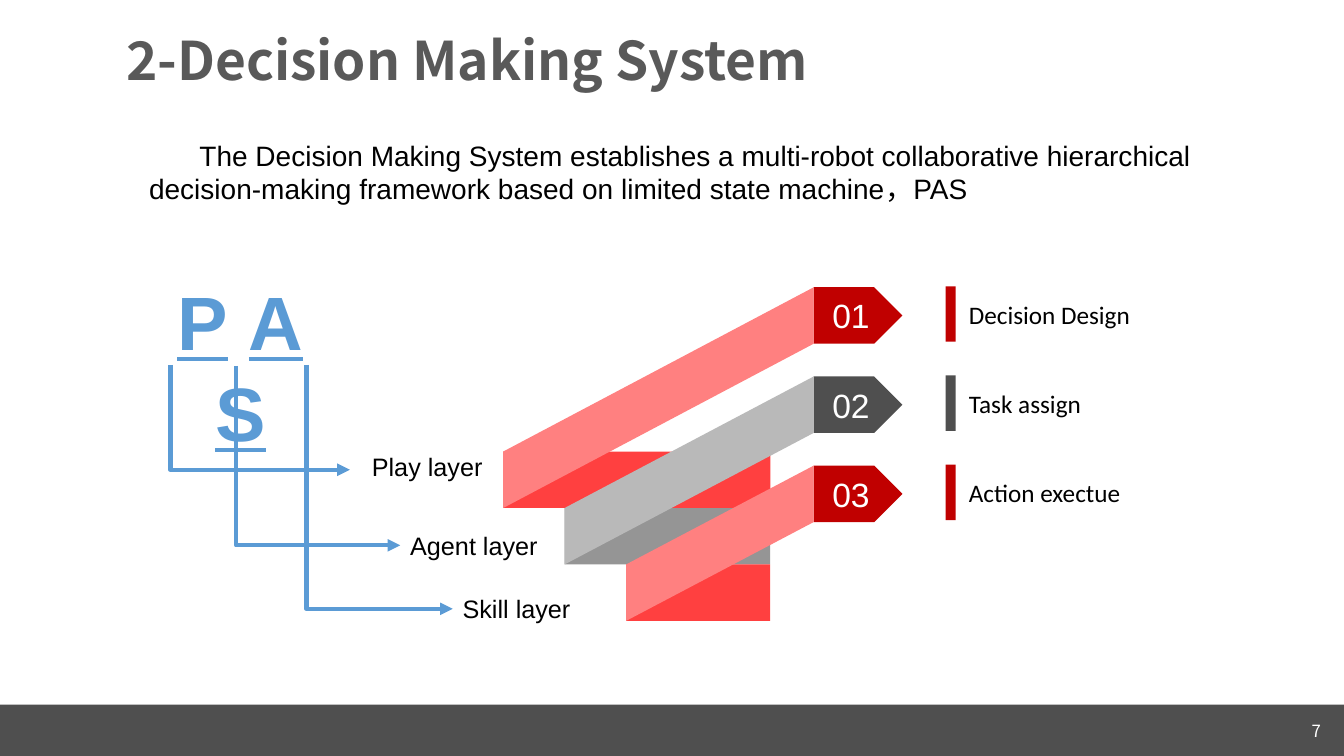
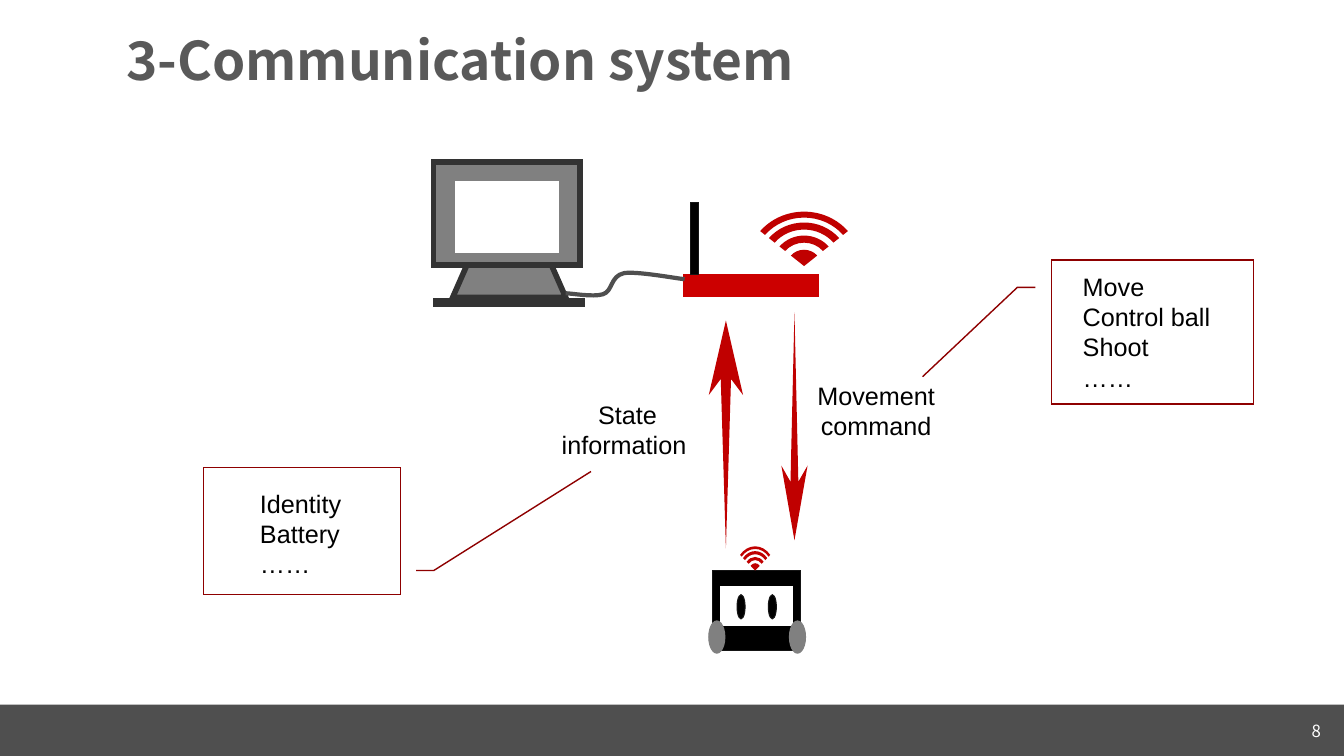
from math import cos, radians, sin, tan

from lxml import etree
from pptx import Presentation
from pptx.dml.color import RGBColor
from pptx.enum.shapes import MSO_CONNECTOR as CONN, MSO_SHAPE as SHAPE
from pptx.enum.text import MSO_ANCHOR as ANCHOR, MSO_AUTO_SIZE as FIT, PP_ALIGN as ALIGN
from pptx.oxml.ns import qn
from pptx.util import Inches, Pt

COLORS = {
    "red": "C00000", "bright": "FF4040", "pink": "FF8080", "router": "CC0000",
    "dark": "4F4F4F", "mid": "959595", "pale": "B9B9B9", "title": "595959",
    "blue": "5B9BD5", "callout": "8E0000", "gray": "808080", "frame": "333333",
    "edge": "151515", "black": "000000", "white": "FFFFFF",
}
HEADING = "Noto Sans CJK SC"
BODY = "Arial"


def rgb(name):
    return RGBColor.from_string(COLORS[name])


def paint(shape, fill=None, line=None, width=0.75):
    shape.shadow.inherit = False
    shape.fill.background()
    shape.line.fill.background()
    if fill:
        shape.fill.solid()
        shape.fill.fore_color.rgb = rgb(fill)
    if line:
        shape.line.color.rgb = rgb(line)
        shape.line.width = Pt(width)
        etree.SubElement(shape.line._get_or_add_ln(), qn("a:miter"), lim="800000")
    return shape


def add_box(shapes, kind, x, y, w, h, *look):
    return paint(shapes.add_shape(kind, *map(Inches, (x, y, w, h))), *look)


def add_outline(shapes, contours, *look, close=True):
    """Draw contours of steps: one point is a line, three points are a curve."""
    builder = None
    for (start,), *steps in contours:
        x, y = map(Inches, start)
        if builder is None:
            builder = shapes.build_freeform(x, y)
        else:
            builder.move_to(x, y)
        points = [tuple(map(Inches, point)) for step in steps for point in step]
        builder.add_line_segments(points, close=close)
    shape = builder.convert_to_shape()
    lines = iter(list(shape.element.iter(qn("a:lnTo"))))
    for step in (step for contour in contours for step in contour[1:]):
        first, *others = [next(lines) for _ in step]
        if others:
            first.tag = qn("a:cubicBezTo")
        for other in others:
            first.append(other[0])
            other.getparent().remove(other)
    return paint(shape, *look)


def add_polygon(shapes, points, fill):
    return add_outline(shapes, [[(point,) for point in points]], fill)


def style_font(font, size, color="black", name=BODY, **flags):
    for key, value in dict(size=Pt(size), name=name, **flags).items():
        setattr(font, key, value)
    font.color.rgb = rgb(color)


def write(shape, text, size, align=ALIGN.LEFT, anchor=ANCHOR.TOP, inset=None, **font):
    """Fill a shape with one paragraph per line of text."""
    tf = shape.text_frame
    tf.word_wrap, tf.auto_size, tf.vertical_anchor = True, FIT.NONE, anchor
    if inset is not None:
        for side in ("left", "top", "right", "bottom"):
            setattr(tf, f"margin_{side}", Inches(inset))
    for i, line in enumerate(text.split("\n")):
        p = tf.add_paragraph() if i else tf.paragraphs[0]
        p.alignment = align
        r = p.add_run()
        r.text = line
        style_font(r.font, size, **font)
    return tf


def add_text(shapes, x, y, w, h, text, size, **fmt):
    return write(shapes.add_textbox(*map(Inches, (x, y, w, h))), text, size, **fmt)


def add_footer_band(s):
    """Put the band on the layout, so that its slides share it."""
    band = add_box(s.shapes, SHAPE.RECTANGLE, 0, 6.99, 13.33, 0.51, "dark")
    band.element.nvSpPr.cNvPr.set("id", "20")
    s.slide_layout.shapes.element.insert(2, band.element)


def new_slide(prs, title, number):
    s = prs.slides.add_slide(prs.slide_layouts[5])
    if len(prs.slides) == 1:
        add_footer_band(s)
    heading = s.shapes.title
    for key, value in dict(left=1.15, top=0.05, width=11.5, height=1.15).items():
        setattr(heading, key, Inches(value))
    tf = write(heading, title, 38, anchor=ANCHOR.MIDDLE,
               color="title", name=HEADING, bold=True)
    tf.paragraphs[0].line_spacing = 0.9
    add_text(s.shapes, 10.2, 7.05, 3, 0.4, str(number), 12, align=ALIGN.RIGHT,
             anchor=ANCHOR.MIDDLE, color="white", name=HEADING)
    return s


def add_drop_arrow(s, *ends):
    """Draw an arrow that goes straight down, then right."""
    arrow = s.shapes.add_connector(CONN.ELBOW, *map(Inches, ends))
    arrow.line.color.rgb = rgb("blue")
    arrow.line.width = Pt(3)
    guides = arrow.element.spPr.find(".//" + qn("a:avLst"))
    etree.SubElement(guides, qn("a:gd"), name="adj1", fmla="val 0")
    etree.SubElement(arrow.line._get_or_add_ln(), qn("a:tailEnd"), type="triangle")
    etree.SubElement(arrow.element.spPr, qn("a:effectLst"))


def add_acronym(s, x, y):
    tf = s.shapes.add_textbox(*map(Inches, (x, y, 1.75, 1.01))).text_frame
    tf.word_wrap = True
    p = tf.paragraphs[0]
    p.alignment = ALIGN.CENTER
    for char in "P A S":
        r = p.add_run()
        r.text = char
        style_font(r.font, 54, "blue", bold=True, underline=char != " ")


def add_layers(s, x, y):
    layers = [  # label, label offset, arrow start, arrow end
        ("Play layer", (2.08, 1.75), (0.18, 0.94), (1.96, 1.98)),
        ("Agent layer", (2.46, 2.53), (0.83, 0.95), (2.46, 2.73)),
        ("Skill layer", (2.98, 3.16), (1.53, 0.94), (2.98, 3.36)),
    ]
    add_acronym(s, x, y)
    for label, (lx, ly), (x1, y1), (x2, y2) in layers:
        add_text(s.shapes, x + lx, y + ly, 1.5, 0.4, label, 18)
        add_drop_arrow(s, x + x1, y + y1, x + x2, y + y2)


def add_ribbons(s, x, y):
    rows = [
        ("Decision Design", "red", "bright", "pink"),
        ("Task assign", "dark", "mid", "pale"),
        ("Action exectue", "red", "bright", "pink"),
    ]
    h = 0.56
    tag_x, base_right = x + 3.08, x + 2.65
    for i, (label, tag_fill, base_fill, ribbon_fill) in enumerate(rows):
        tag_y = y + i * 0.885
        base_x, base_y = x + i * 0.61, y + 1.63 + i * 0.56
        tag = add_box(s.shapes, SHAPE.PENTAGON, tag_x, tag_y, 0.88, h, tag_fill)
        write(tag, f"{i + 1:02}", 24, align=ALIGN.CENTER, anchor=ANCHOR.MIDDLE,
              inset=0, color="white")
        add_box(s.shapes, SHAPE.RECTANGLE, base_x, base_y, base_right - base_x, h, base_fill)
        add_polygon(s.shapes, [(tag_x, tag_y), (tag_x, tag_y + h),
                               (base_x, base_y + h), (base_x, base_y)], ribbon_fill)
        add_box(s.shapes, SHAPE.RECTANGLE, x + 4.39, tag_y - 0.01, 0.1, 0.55, tag_fill)
        add_text(s.shapes, x + 4.62, tag_y - 0.01, 3.27, 0.55, label, 18,
                 anchor=ANCHOR.MIDDLE, inset=0, name="Calibri")


def add_group(s, x, y, parts):
    """Group shapes given as kind, offset, size, fill, line and line width."""
    shapes = s.shapes.add_group_shape().shapes
    return [add_box(shapes, kind, x + dx, y + dy, *rest) for kind, dx, dy, *rest in parts]


def add_computer(s, x, y):
    stand, *_ = add_group(s, x, y, [
        (SHAPE.TRAPEZOID, 0.19, 0.71, 1.12, 0.63, "gray", "frame", 4),
        (SHAPE.RECTANGLE, 0, 0, 1.45, 1.02, "gray", "frame", 4),
        (SHAPE.RECTANGLE, 0.22, 0.19, 1.02, 0.71, "white", "white"),
        (SHAPE.RECTANGLE, 0, 1.35, 1.5, 0.08, "frame", "frame"),
    ])
    stand.adjustments[0] = 0.44


def add_router(s, x, y):
    add_group(s, x, y, [
        (SHAPE.RECTANGLE, 0, 0.71, 1.34, 0.24, "router", "router"),
        (SHAPE.RECTANGLE, 0, 0.94, 1.34, 0.04, "white", "white"),
        (SHAPE.RECTANGLE, 0.07, 0, 0.08, 0.71, "black", "edge"),
    ])


def add_robot(s, x, y):
    add_group(s, x, y, [
        (SHAPE.RECTANGLE, 0.04, 0, 0.87, 0.79, "black", "edge"),
        (SHAPE.RECTANGLE, 0.12, 0.16, 0.71, 0.39, "white", "white"),
        *[(SHAPE.OVAL, dx, 0.5, 0.16, 0.32, "gray", "gray") for dx in (0, 0.8)],
        *[(SHAPE.OVAL, dx, 0.24, 0.08, 0.24, "black", "edge") for dx in (0.28, 0.59)],
    ])


def add_signal(s, x, y, w, h):
    """Draw concentric arcs over an apex at the bottom middle of the box."""
    half = radians(50)
    pull = 4 / 3 * tan(half / 4)
    reach = w / 2 / sin(half)

    def arc(scale, side):
        """Start on one side (-1 left, 1 right) and curve over the top."""
        def at(u, v):
            return x + w / 2 + side * reach * scale * u, y + h - h * scale * v
        u, v = sin(half), cos(half)
        inner = u - pull * v, v + pull * u
        return [(at(u, v),), (at(*inner), at(pull, 1), at(0, 1)),
                (at(-pull, 1), at(-inner[0], inner[1]), at(-u, v))]

    bands = [(1, 0.89), (0.8, 0.67), (0.56, 0.43)]
    contours = [arc(outer, -1) + arc(inner, 1) for outer, inner in bands]
    contours.append(arc(0.3, -1) + [((x + w / 2, y + h),)])
    add_outline(s.shapes, contours, "red")


def add_cable(s, x, y):
    steps = [[(0, 0.22)], [(0.06, 0.22), (0.27, 0.26), (0.37, 0.23)],
             [(0.47, 0.2), (0.44, 0.05), (0.58, 0.02)],
             [(0.71, 0), (1.08, 0.07), (1.18, 0.08)]]
    route = [[(x + dx, y + dy) for dx, dy in step] for step in steps]
    add_outline(s.shapes, [route], None, "dark", 3, close=False)


def add_spike(s, x, tip, tail, half):
    """Draw a long arrow from a sharp tail to a barbed head."""
    down = 1 if tail > tip else -1
    barb, notch = tip + down * 0.74, tip + down * 0.58
    add_polygon(s.shapes, [(x, tip), (x + half, barb), (x + half * 0.3, notch), (x, tail),
                           (x - half * 0.3, notch), (x - half, barb)], "red")


def add_callout(s, x, y, w, h, text, text_box, pointer):
    shapes = s.shapes.add_group_shape().shapes
    callout = add_box(shapes, SHAPE.LINE_CALLOUT_2, x, y, w, h, None, "callout", 1)
    for i, value in enumerate(pointer):
        callout.adjustments[i] = value
    dx, dy, *size = text_box
    add_text(shapes, x + dx, y + dy, *size, text, 18)


def build_decision_slide(prs):
    s = new_slide(prs, "2-Decision Making System", 7)
    tf = add_text(s.shapes, 1.38, 1.32, 10.87, 0.77,
                  "The Decision Making System establishes a multi-robot collaborative "
                  "hierarchical decision-making framework based on limited state "
                  "machine，PAS", 20)
    tf.paragraphs[0]._p.get_or_add_pPr().set("indent", str(Inches(0.5)))
    add_ribbons(s, 4.99, 2.85)
    add_layers(s, 1.51, 2.68)


def build_communication_slide(prs):
    s = new_slide(prs, "3-Communication system", 8)
    add_computer(s, 4.3, 1.61)
    add_router(s, 6.78, 2.01)
    add_cable(s, 5.61, 2.69)
    add_signal(s, 7.54, 2.1, 0.87, 0.54)
    add_robot(s, 7.03, 5.66)
    add_spike(s, 7.88, 5.36, 3.1, 0.13)
    add_spike(s, 7.2, 3.18, 5.44, 0.17)
    for x, y, w, text in [(7.94, 3.72, 1.5, "Movement command"),
                          (5.46, 3.91, 1.53, "State information ")]:
        add_text(s.shapes, x, y, w, 0.71, text, 18, align=ALIGN.CENTER)
    add_signal(s, 7.34, 5.42, 0.3, 0.24)
    add_callout(s, 10.43, 2.58, 2, 1.43, "Move\nControl ball\nShoot\n……",
                (0.21, 0.06, 1.65, 1.31), (0.19, -0.08, 0.19, -0.17, 0.81, -0.64))
    add_callout(s, 2.02, 4.64, 1.95, 1.26, "Identity\nBattery\n……",
                (0.46, 0.15, 1.28, 1.01), (0.81, 1.08, 0.81, 1.17, 0.03, 1.97))


def main():
    prs = Presentation()
    prs.slide_width, prs.slide_height = Inches(13.33), Inches(7.5)
    build_decision_slide(prs)
    build_communication_slide(prs)
    prs.save("out.pptx")


if __name__ == "__main__":
    main()
